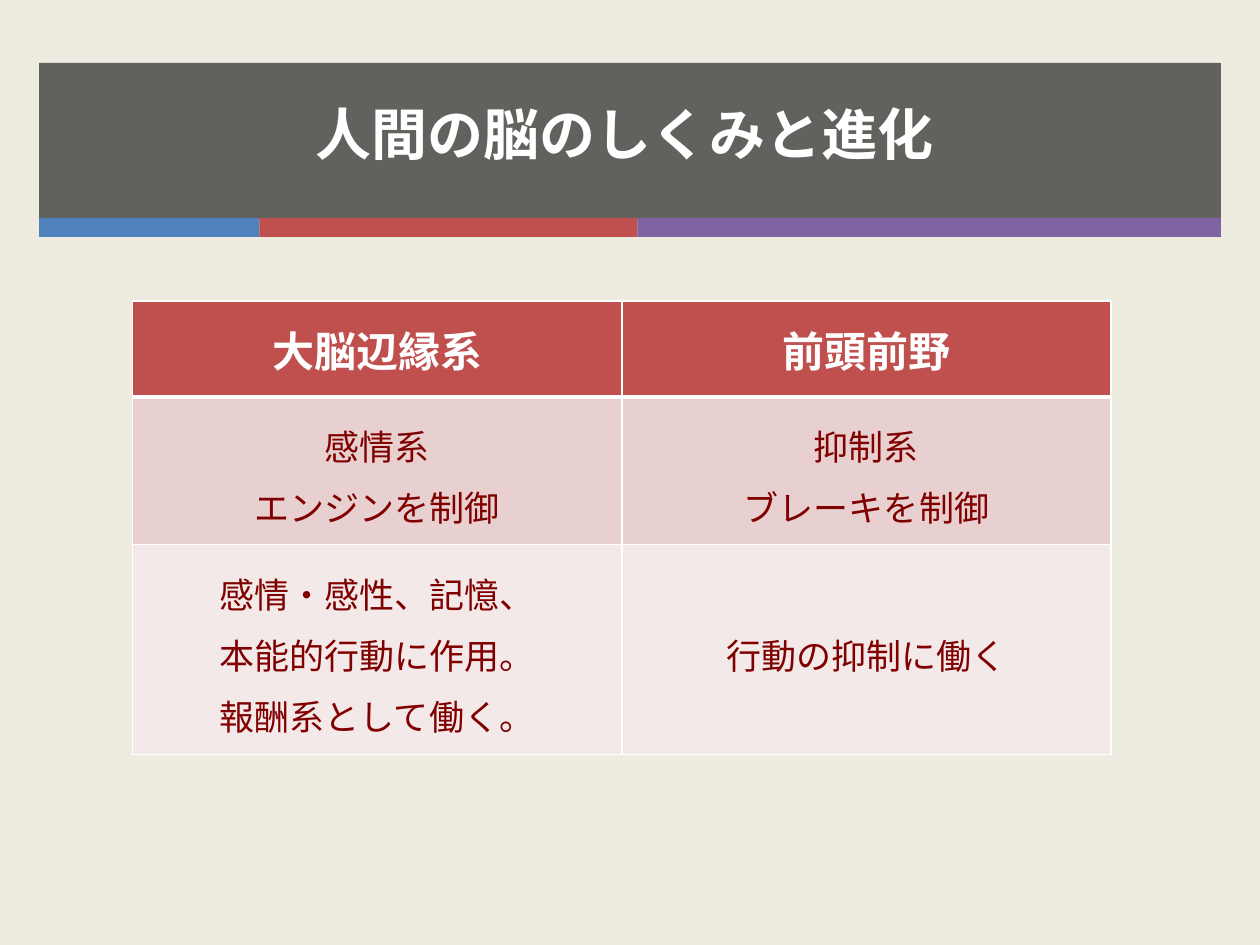
from lxml import etree
from pptx import Presentation
from pptx.dml.color import RGBColor
from pptx.enum.shapes import MSO_SHAPE
from pptx.enum.text import MSO_ANCHOR, PP_ALIGN
from pptx.oxml.ns import qn
from pptx.util import Inches, Pt

RECTANGLE = MSO_SHAPE.RECTANGLE
MIDDLE = MSO_ANCHOR.MIDDLE
CENTER = PP_ALIGN.CENTER

# Content
TITLE = "人間の脳のしくみと進化"
ROWS = [
    (["大脳辺縁系"], ["前頭前野"]),
    (["感情系", "エンジンを制御"], ["抑制系", "ブレーキを制御"]),
    (["感情・感性、記憶、", "本能的行動に作用。", "報酬系として働く。"], ["行動の抑制に働く"]),
]

COLORS = {
    "background": "EEECE1", "band": "262626", "white": "FFFFFF", "text": "800000",
    "blue": "4F81BD", "red": "C0504D", "purple": "8064A2",
    "light": "E8D0D0", "lighter": "F4E9E9",
}
STRIPES = [("blue", 1.75), ("red", 3), ("purple", 4.63)]
ROW_HEIGHTS = [0.76, 1.17, 1.67]
ROW_FILLS = ["red", "light", "lighter"]
COLUMN_WIDTH = 3.885
BAND_LEFT, BAND_TOP, BAND_WIDTH, BAND_HEIGHT = 0.31, 0.5, 9.38, 1.24
STRIPE_TOP, STRIPE_HEIGHT = 1.73, 0.15

TITLE_FONT = {"name": "Arial", "size": Pt(32), "bold": True}
HEADER_FONT = {"name": "Calibri", "size": Pt(24), "bold": True}
BODY_FONT = {"name": "Calibri", "size": Pt(20), "bold": False}


def color(name):
    return RGBColor.from_string(COLORS[name])


def add_bar(slide, left, top, width, height, fill):
    bar = slide.shapes.add_shape(RECTANGLE, *map(Inches, (left, top, width, height)))
    bar.shadow.inherit = False
    bar.fill.solid()
    bar.fill.fore_color.rgb = color(fill)
    bar.line.fill.background()
    return bar


def write_lines(text_frame, lines, font_format, font_color, spacing=None):
    text_frame.text = "\n".join(lines)
    for paragraph in text_frame.paragraphs:
        paragraph.alignment = CENTER
        paragraph.line_spacing = spacing
        font = paragraph.runs[0].font
        for name, value in font_format.items():
            setattr(font, name, value)
        font.color.rgb = color(font_color)


def add_borders(cell, widths):
    properties = cell._tc.get_or_add_tcPr()
    for side, width in widths.items():
        line = etree.SubElement(properties, qn(f"a:ln{side}"), w=str(Pt(width)))
        fill = etree.SubElement(line, qn("a:solidFill"))
        etree.SubElement(fill, qn("a:srgbClr"), val=COLORS["white"])


presentation = Presentation()
presentation.slide_width, presentation.slide_height = Inches(10), Inches(7.5)
slide = presentation.slides.add_slide(presentation.slide_layouts[5])
slide.background.fill.solid()
slide.background.fill.fore_color.rgb = color("background")

# Translucent title band and the stripes under it
band = add_bar(slide, BAND_LEFT, BAND_TOP, BAND_WIDTH, BAND_HEIGHT, "band")
band_color = band._element.spPr.find(f".//{qn('a:srgbClr')}")
etree.SubElement(band_color, qn("a:alpha"), val="70000")
stripe_left = BAND_LEFT
for fill, width in STRIPES:
    add_bar(slide, stripe_left, STRIPE_TOP, width, STRIPE_HEIGHT, fill)
    stripe_left += width

# Title, brought in front of the band
title = slide.shapes.title
title.left, title.top, title.width, title.height = map(Inches, (2.39, 0.74, 5.14, 0.64))
title.text_frame.word_wrap = False
title.text_frame.vertical_anchor = MIDDLE
write_lines(title.text_frame, [TITLE], TITLE_FONT, "white")
title._element.getparent().append(title._element)

# Comparison table
table = slide.shapes.add_table(
    len(ROWS), len(ROWS[0]), Inches(1.05), Inches(2.39),
    Inches(COLUMN_WIDTH * len(ROWS[0])), Inches(sum(ROW_HEIGHTS)),
).table
for column in table.columns:
    column.width = Inches(COLUMN_WIDTH)
for row_index, (row, height, fill) in enumerate(zip(ROWS, ROW_HEIGHTS, ROW_FILLS)):
    table.rows[row_index].height = Inches(height)
    header = row_index == 0
    borders = {"L": 1, "R": 1, "T": 3 if row_index == 1 else 1, "B": 3 if header else 1}
    for column_index, lines in enumerate(row):
        cell = table.cell(row_index, column_index)
        add_borders(cell, borders)
        cell.fill.solid()
        cell.fill.fore_color.rgb = color(fill)
        cell.vertical_anchor = MIDDLE
        if header:
            write_lines(cell.text_frame, lines, HEADER_FONT, "white")
        else:
            write_lines(cell.text_frame, lines, BODY_FONT, "text", 1.2)

presentation.save("out.pptx")
